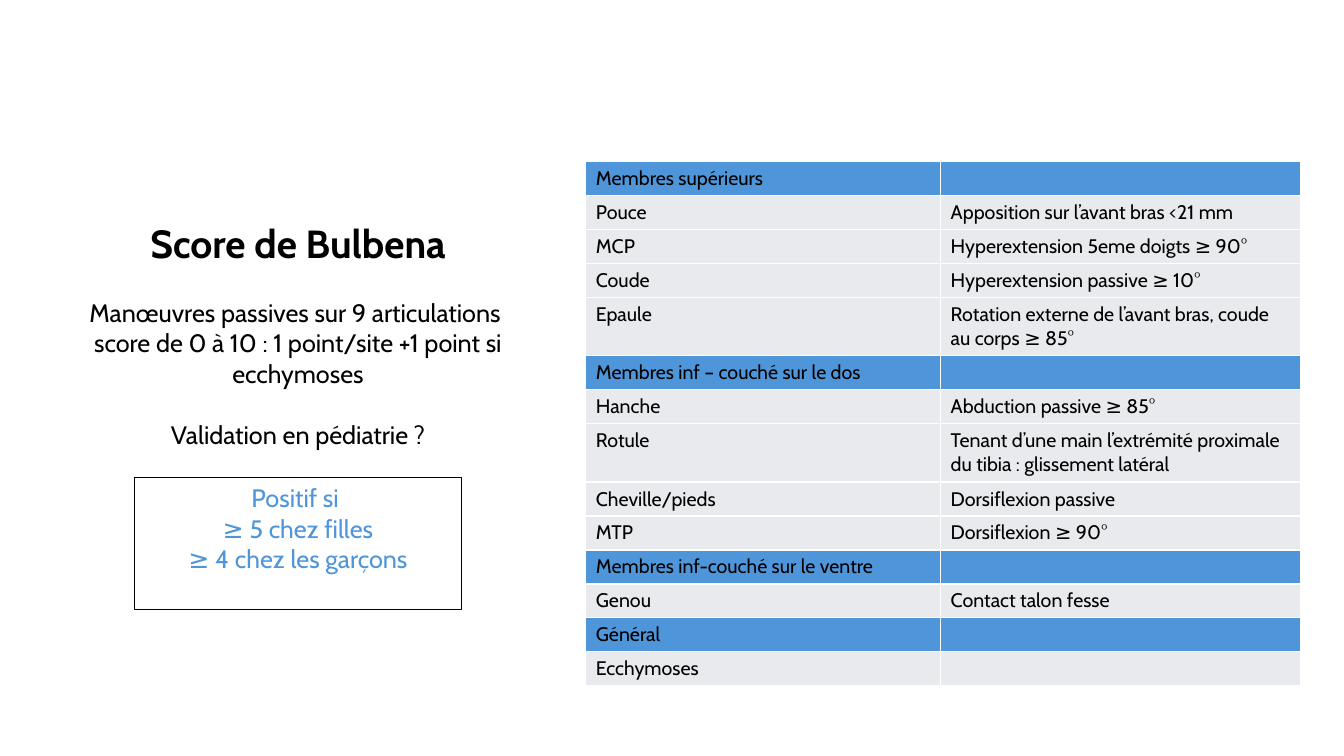
from lxml.etree import SubElement
from pptx import Presentation
from pptx.dml.color import RGBColor as RGB
from pptx.enum.shapes import MSO_SHAPE as SHAPE
from pptx.enum.text import MSO_ANCHOR as ANCHOR, PP_ALIGN as ALIGN
from pptx.oxml.ns import qn
from pptx.util import Inches, Pt

COLORS = {"text": "000000", "blue": "4E95D9", "grey": "E8EAED", "white": "FFFFFF"}

INTRO = [
    ("Score de Bulbena", 28, True, 0),
    ("Manœuvres passives sur 9 articulations ", 18, False, 22),
    ("score de 0 à 10 : 1 point/site +1 point si ecchymoses", 18, False, 0),
    ("Validation en pédiatrie ?", 18, False, 22),
]
THRESHOLDS = [
    (text, 18, False, 0)
    for text in ("Positif si ", "≥ 5 chez filles", "≥ 4 chez les garçons")
]
SECTIONS = {
    "Membres supérieurs": [
        ("Pouce", "Apposition sur l’avant bras <21 mm"),
        ("MCP", "Hyperextension 5eme doigts ≥ 90°"),
        ("Coude", "Hyperextension passive ≥ 10°"),
        ("Epaule", "Rotation externe de l’avant bras, coude au corps ≥ 85°"),
    ],
    "Membres inf – couché sur le dos": [
        ("Hanche", "Abduction passive ≥ 85°"),
        ("Rotule", "Tenant d’une main l’extrémité proximale du tibia : glissement latéral"),
        ("Cheville/pieds", "Dorsiflexion passive"),
        ("MTP", "Dorsiflexion ≥ 90°"),
    ],
    "Membres inf-couché sur le ventre": [("Genou", "Contact talon fesse")],
    "Général": [("Ecchymoses", "")],
}
TALL_ROWS = ("Epaule", "Rotule")


class SlideBuilder:
    """Draws styled elements on the current slide."""

    def __init__(self, slide, font="Cabin", table_size=14):
        self.slide = slide
        self.font = font
        self.table_size = table_size

    def style(self, p, size, color="text", bold=False):
        for r in p.runs:
            r.font.name = self.font
            r.font.size = Pt(size)
            r.font.bold = bold
            r.font.color.rgb = RGB.from_string(COLORS[color])

    def paragraphs(self, tf, lines, color="text"):
        tf.word_wrap = True
        tf.vertical_anchor = ANCHOR.TOP
        for i, (text, size, bold, before) in enumerate(lines):
            p = tf.add_paragraph() if i else tf.paragraphs[0]
            p.text = text
            p.alignment = ALIGN.CENTER
            p.space_before = Pt(before)
            self.style(p, size, color, bold)

    def text(self, box, lines):
        sp = self.slide.shapes.add_textbox(*map(Inches, box))
        self.paragraphs(sp.text_frame, lines)

    def frame(self, box, lines, color):
        sp = self.slide.shapes.add_shape(SHAPE.RECTANGLE, *map(Inches, box))
        sp.shadow.inherit = False
        sp.fill.background()
        sp.line.color.rgb = RGB.from_string(COLORS["text"])
        sp.line.width = Pt(0.75)
        self.paragraphs(sp.text_frame, lines, color)

    def cell(self, cell, text, fill):
        p = cell.text_frame.paragraphs[0]
        if text:
            p.text = text
            self.style(p, self.table_size)
        else:
            SubElement(p._p, qn("a:endParaRPr"), sz=str(self.table_size * 100))
        tc_pr = cell._tc.get_or_add_tcPr()
        for side in "LRTB":
            ln = SubElement(tc_pr, qn(f"a:ln{side}"), w=str(Pt(1)))
            SubElement(SubElement(ln, qn("a:solidFill")), qn("a:srgbClr"), val=COLORS["white"])
        cell.fill.solid()
        cell.fill.fore_color.rgb = RGB.from_string(COLORS[fill])

    def table(self, box, widths, sections):
        rows = []
        for title, tests in sections.items():
            rows.append((title, "", "blue"))
            rows += [(joint, test, "grey") for joint, test in tests]
        table = self.slide.shapes.add_table(len(rows), len(widths), *map(Inches, box)).table
        table.first_row = table.horz_banding = False
        for column, width in zip(table.columns, widths):
            column.width = Inches(width)
        for row, (joint, test, fill) in zip(table.rows, rows):
            row.height = Inches(0.58 if joint in TALL_ROWS else 0.33)
            for cell, text in zip(row.cells, (joint, test)):
                self.cell(cell, text, fill)


def main():
    prs = Presentation()
    prs.slide_width, prs.slide_height = Inches(13.33), Inches(7.5)
    s = SlideBuilder(prs.slides.add_slide(prs.slide_layouts[6]))
    s.table((5.81, 1.6, 7.09, 5.15), (3.52, 3.57), SECTIONS)
    s.text((0.58, 2.13, 4.75, 2.69), INTRO)
    s.frame((1.33, 4.74, 3.25, 1.31), THRESHOLDS, "blue")
    prs.save("out.pptx")


if __name__ == "__main__":
    main()
